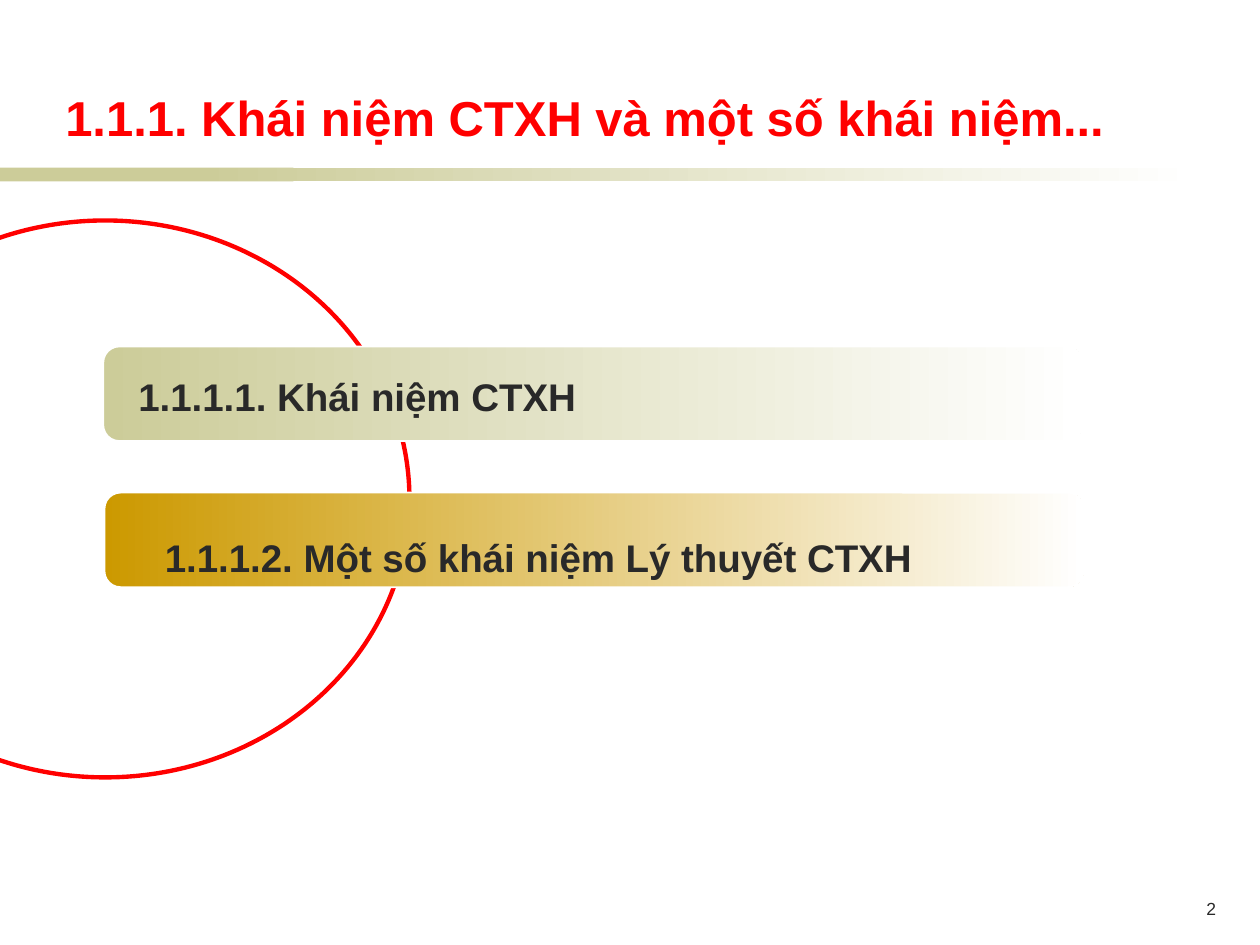
from pptx import Presentation
from pptx.dml.color import RGBColor
from pptx.enum.shapes import MSO_SHAPE
from pptx.enum.text import MSO_ANCHOR, PP_ALIGN
from pptx.util import Inches, Pt

RED = RGBColor(0xFF, 0x00, 0x00)
SAGE = RGBColor(0xCC, 0xCC, 0x99)
GOLD = RGBColor(0xCC, 0x99, 0x00)
WHITE = RGBColor(0xFF, 0xFF, 0xFF)
DARK = RGBColor(0x29, 0x29, 0x29)


def add_text(page, text, left, top, width, height, *, size, color=DARK,
             bold=False, align=PP_ALIGN.LEFT, anchor=MSO_ANCHOR.TOP):
    box = page.shapes.add_textbox(
        Inches(left), Inches(top), Inches(width), Inches(height))
    frame = box.text_frame
    frame.word_wrap = True
    frame.vertical_anchor = anchor
    para = frame.paragraphs[0]
    para.alignment = align
    span = para.add_run()
    span.text = text
    span.font.name = "Arial"
    span.font.size = Pt(size)
    span.font.bold = bold
    span.font.color.rgb = color


def add_outline(page, kind, left, top, width, height, *, line=None, weight=1):
    """Add an unfilled shape, with a line if a colour is given."""
    shape = page.shapes.add_shape(
        kind, Inches(left), Inches(top), Inches(width), Inches(height))
    shape.shadow.inherit = False
    shape.fill.background()
    if line is None:
        shape.line.fill.background()
    else:
        shape.line.color.rgb = line
        shape.line.width = Pt(weight)
    return shape


def fill_solid(shape, color):
    shape.fill.solid()
    shape.fill.fore_color.rgb = color


def fade_to_white(shape, color):
    shape.fill.gradient()
    shape.fill.gradient_angle = 0
    for stop, stop_color in zip(shape.fill.gradient_stops, (color, WHITE)):
        stop.color.rgb = stop_color


def add_topic(page, text, color, bar_left, bar_top, text_left, text_top, text_width):
    bar = add_outline(page, MSO_SHAPE.ROUNDED_RECTANGLE,
                      bar_left, bar_top, 7.77, 0.75, line=WHITE)
    bar.adjustments[0] = 0.17
    fade_to_white(bar, color)
    add_text(page, text, text_left, text_top, text_width, 0.47, size=22, bold=True)


def main():
    deck = Presentation()
    deck.slide_width, deck.slide_height = Inches(10), Inches(7.5)
    page = deck.slides.add_slide(deck.slide_layouts[6])

    # Rule under the title: solid start, then a fade
    fill_solid(add_outline(page, MSO_SHAPE.RECTANGLE, 0, 1.33, 2.33, 0.11), SAGE)
    fade_to_white(add_outline(page, MSO_SHAPE.RECTANGLE, 1.58, 1.33, 7.92, 0.11), SAGE)

    # Title and page number
    add_text(page, "1.1.1. Khái niệm CTXH và một số khái niệm...",
             0.42, 0.33, 9.17, 0.88, size=28, color=RED, bold=True,
             anchor=MSO_ANCHOR.BOTTOM)
    add_text(page, "2", 7.67, 7.08, 2.08, 0.5, size=10, align=PP_ALIGN.RIGHT)

    # Circle behind the topic bars
    add_outline(page, MSO_SHAPE.OVAL, -1.58, 1.75, 4.83, 4.42, line=RED, weight=2.5)

    # Topics
    add_topic(page, "1.1.1.1. Khái niệm CTXH", SAGE, 0.82, 2.75, 1, 2.91, 6.42)
    add_topic(page, "1.1.1.2. Một số khái niệm Lý thuyết CTXH", GOLD,
              0.83, 3.91, 1.21, 4.19, 7.58)

    deck.save("out.pptx")


if __name__ == "__main__":
    main()
